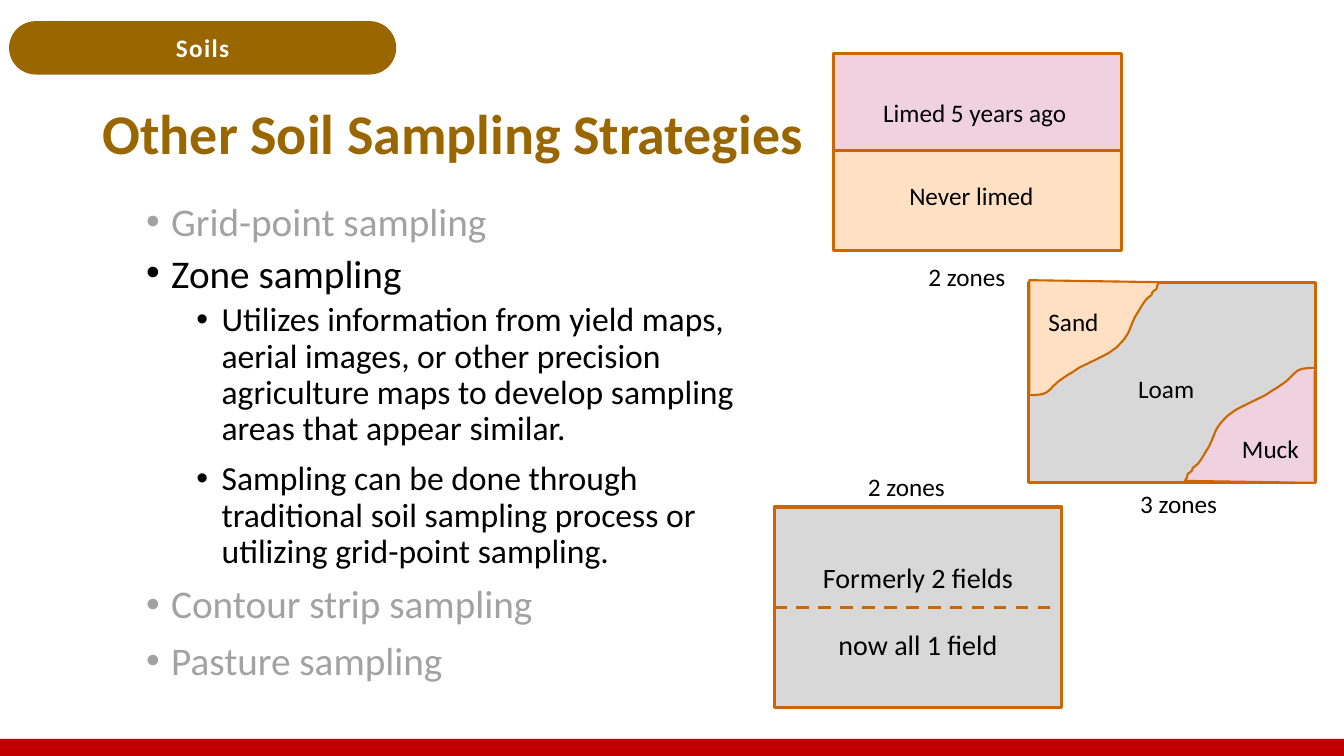
from typing import NamedTuple

import pptx
import pptx.dml.color
import pptx.enum.dml
import pptx.enum.shapes
import pptx.enum.text
import pptx.oxml
import pptx.oxml.ns
import pptx.util
from pptx.util import Inches

COLORS = {
    "white": "FFFFFF", "black": "000000", "faded": "A2A2A2", "brown": "996600",
    "red": "C00000", "border": "CC6600", "pink": "F0D1E0", "peach": "FFE0C2",
    "gray": "D8D8D8",
}
SHAPES = pptx.enum.shapes.MSO_SHAPE
ALIGN = pptx.enum.text.PP_ALIGN
MIDDLE = pptx.enum.text.MSO_ANCHOR.MIDDLE
FIT_TEXT = pptx.enum.text.MSO_AUTO_SIZE.SHAPE_TO_FIT_TEXT


class Field(NamedTuple):
    left: float
    top: float
    height: float
    color: str


class Zone(NamedTuple):
    left: float
    top: float
    rotation: float
    color: str


class Label(NamedTuple):
    text: str
    left: float
    top: float
    width: float


class Bullet(NamedTuple):
    text: str
    level: int = 0
    color: str = "faded"
    spacing: float = 0.9
    before: float = 10
    after: float = 0


FIELD_WIDTH = 2.85
LIMED_FIELDS = [Field(8.27, 0.53, 1, "pink"), Field(8.27, 1.49, 1, "peach")]
MERGED_FIELD = Field(7.68, 5.03, 1.99, "gray")
LOAM_FIELD = Field(10.2, 2.8, 1.99, "gray")
ZONES = [Zone(10.2, 2.78, 0, "peach"), Zone(11.75, 3.65, 180, "pink")]

LABELS = [
    Label("2 zones", 9.11, 2.54, 1.19),
    Label("2 zones", 8.51, 4.63, 1.19),
    Label("3 zones", 11.21, 4.8, 1.19),
    Label("Sand", 10.3, 2.99, 0.73),
    Label("Loam", 11.19, 3.65, 0.86),
    Label("Muck", 12.22, 4.25, 0.83),
    Label("Limed 5 years ago", 8.66, 0.92, 2.09),
    Label("Never limed", 8.92, 1.74, 1.56),
]

BULLETS = [
    Bullet("Grid-point sampling", spacing=0.8, before=0),
    Bullet("Zone sampling", color="black", spacing=0.8),
    Bullet("Utilizes information from yield maps, aerial images, or other precision "
           "agriculture maps to develop sampling areas that appear similar.",
           1, "black", before=5, after=5),
    Bullet("Sampling can be done through traditional soil sampling process or "
           "utilizing grid-point sampling.", 1, "black", before=5),
    Bullet("Contour strip sampling"),
    Bullet("Pasture sampling"),
]

# Straight corner of a zone, then its curved edge: two controls and an end per curve.
ZONE_CORNER = [(10.21, 2.78), (10.21, 3.89), (10.2, 3.92)]
ZONE_EDGE = [
    (10.25, 3.92), (10.29, 3.92), (10.34, 3.91), (10.4, 3.9), (10.44, 3.83), (10.48, 3.8),
    (10.51, 3.77), (10.55, 3.75), (10.59, 3.72), (10.63, 3.7), (10.67, 3.67), (10.7, 3.65),
    (10.8, 3.6), (10.91, 3.55), (11, 3.5), (11.02, 3.48), (11.05, 3.47), (11.07, 3.45),
    (11.14, 3.38), (11.17, 3.35), (11.2, 3.28), (11.22, 3.23), (11.24, 3.18), (11.26, 3.14),
    (11.3, 3.08), (11.32, 3.03), (11.37, 2.97), (11.39, 2.95), (11.4, 2.94), (11.42, 2.93),
    (11.42, 2.92), (11.43, 2.91), (11.43, 2.9), (11.44, 2.88), (11.46, 2.88), (11.47, 2.87),
    (11.48, 2.86), (11.47, 2.84), (11.48, 2.83), (11.48, 2.82), (11.5, 2.8), (11.5, 2.8),
]


def rgb(name: str) -> pptx.dml.color.RGBColor:
    return pptx.dml.color.RGBColor.from_string(COLORS[name])


def element(tag: str):
    return pptx.oxml.parse_xml(f'<a:{tag} {pptx.oxml.ns.nsdecls("a")}/>')


def paint(shape, fill: str, border: float = 0) -> None:
    shape.shadow.inherit = False
    shape.fill.solid()
    shape.fill.fore_color.rgb = rgb(fill)
    if border:
        shape.line.color.rgb = rgb("border")
        shape.line.width = pptx.util.Pt(border)
    else:
        shape.line.fill.background()


def style(para, size: float, color: str, bold: bool = False) -> None:
    for span in para.runs:
        span.font.name = "Calibri"
        span.font.size = pptx.util.Pt(size)
        span.font.bold = bold
        span.font.color.rgb = rgb(color)


def add_block(page, kind, left: float, top: float, width: float, height: float,
              fill: str, border: float = 0):
    block = page.shapes.add_shape(kind, *map(Inches, (left, top, width, height)))
    paint(block, fill, border)
    return block


def add_field(page, field: Field):
    return add_block(page, SHAPES.RECTANGLE, field.left, field.top, FIELD_WIDTH,
                     field.height, field.color, 2.25)


def add_text(page, text: str, left: float, top: float, width: float, height: float,
             size: float = 18, color: str = "black", bold: bool = False):
    frame = page.shapes.add_textbox(*map(Inches, (left, top, width, height))).text_frame
    frame.word_wrap = True
    frame.text = text
    for para in frame.paragraphs:
        style(para, size, color, bold)
    return frame


def add_zone(page, zone: Zone) -> None:
    """Draw the outline, turning each three edge points into one Bezier curve."""
    first, *others = [(Inches(x), Inches(y)) for x, y in ZONE_CORNER + ZONE_EDGE]
    builder = page.shapes.build_freeform(*first)
    builder.add_line_segments(others, close=True)
    shape = builder.convert_to_shape()
    segments = list(shape._element.iter(pptx.oxml.ns.qn("a:lnTo")))
    edge = segments[len(ZONE_CORNER) - 1:][:len(ZONE_EDGE)]
    for start in range(0, len(edge), 3):
        curve = element("cubicBezTo")
        edge[start].addprevious(curve)
        for segment in edge[start:start + 3]:
            curve.append(segment[0])
            segment.getparent().remove(segment)
    shape.left, shape.top = Inches(zone.left), Inches(zone.top)
    shape.rotation = zone.rotation
    paint(shape, zone.color, 1.5)


def add_divider(page, field_box) -> None:
    """Join the middles of a field's left and right sides with a dashed line."""
    divider = page.shapes.add_connector(pptx.enum.shapes.MSO_CONNECTOR.STRAIGHT, 0, 0, 0, 0)
    divider.begin_connect(field_box, 1)
    divider.end_connect(field_box, 3)
    divider.line.color.rgb = rgb("border")
    divider.line.width = pptx.util.Pt(2.25)
    divider.line.dash_style = pptx.enum.dml.MSO_LINE.DASH
    divider._element.spPr.append(element("effectLst"))


def add_bullets(page) -> None:
    frame = add_text(page, "\n".join(b.text for b in BULLETS), 1.35, 2, 6.09, 5.05)
    for para, bullet in zip(frame.paragraphs, BULLETS):
        para.level = bullet.level
        para.line_spacing = bullet.spacing
        para.space_before = pptx.util.Pt(bullet.before)
        para.space_after = pptx.util.Pt(bullet.after)
        properties = para._p.get_or_add_pPr()
        properties.set("marL", str(Inches(0.25 + 0.5 * bullet.level)))
        properties.set("indent", str(Inches(-0.25)))
        properties.append(element('buFont typeface="Arial"'))
        properties.append(element('buChar char="•"'))
        style(para, 24 if bullet.level else 28, bullet.color)


def main() -> None:
    deck = pptx.Presentation()
    deck.slide_width, deck.slide_height = Inches(13.33), Inches(7.5)
    page = deck.slides.add_slide(deck.slide_layouts[6])

    add_block(page, SHAPES.RECTANGLE, 0, 7.33, 13.33, 0.17, "red")
    badge = add_block(page, SHAPES.ROUNDED_RECTANGLE, 0.09, 0.21, 3.84, 0.53, "brown")
    badge.adjustments[0] = 0.5
    badge.text_frame.text = "Soils"
    badge.text_frame.vertical_anchor = MIDDLE
    topic = badge.text_frame.paragraphs[0]
    topic.alignment = ALIGN.CENTER
    style(topic, 18, "white", bold=True)
    topic.runs[0].font._element.set("spc", "100")

    title = add_text(page, "Other Soil Sampling Strategies", 0.92, 0.85, 10.89, 1,
                     40, "brown", bold=True)
    title.vertical_anchor = MIDDLE
    title.paragraphs[0].line_spacing = 0.9
    add_bullets(page)

    for field in LIMED_FIELDS:
        add_field(page, field)
    merged_box = add_field(page, MERGED_FIELD)
    add_field(page, LOAM_FIELD)
    add_divider(page, merged_box)
    for zone in ZONES:
        add_zone(page, zone)

    for label in LABELS:
        frame = add_text(page, label.text, label.left, label.top, label.width, 0.4)
        frame.auto_size = FIT_TEXT
    merged = add_text(page, "Formerly 2 fields\nnow all 1 field", 8.02, 5.51, 2.17, 1.11, 20)
    merged.auto_size = FIT_TEXT
    for para in merged.paragraphs:
        para.alignment = ALIGN.CENTER
    merged.paragraphs[1].space_before = pptx.util.Pt(24)
    deck.save("out.pptx")


if __name__ == "__main__":
    main()
